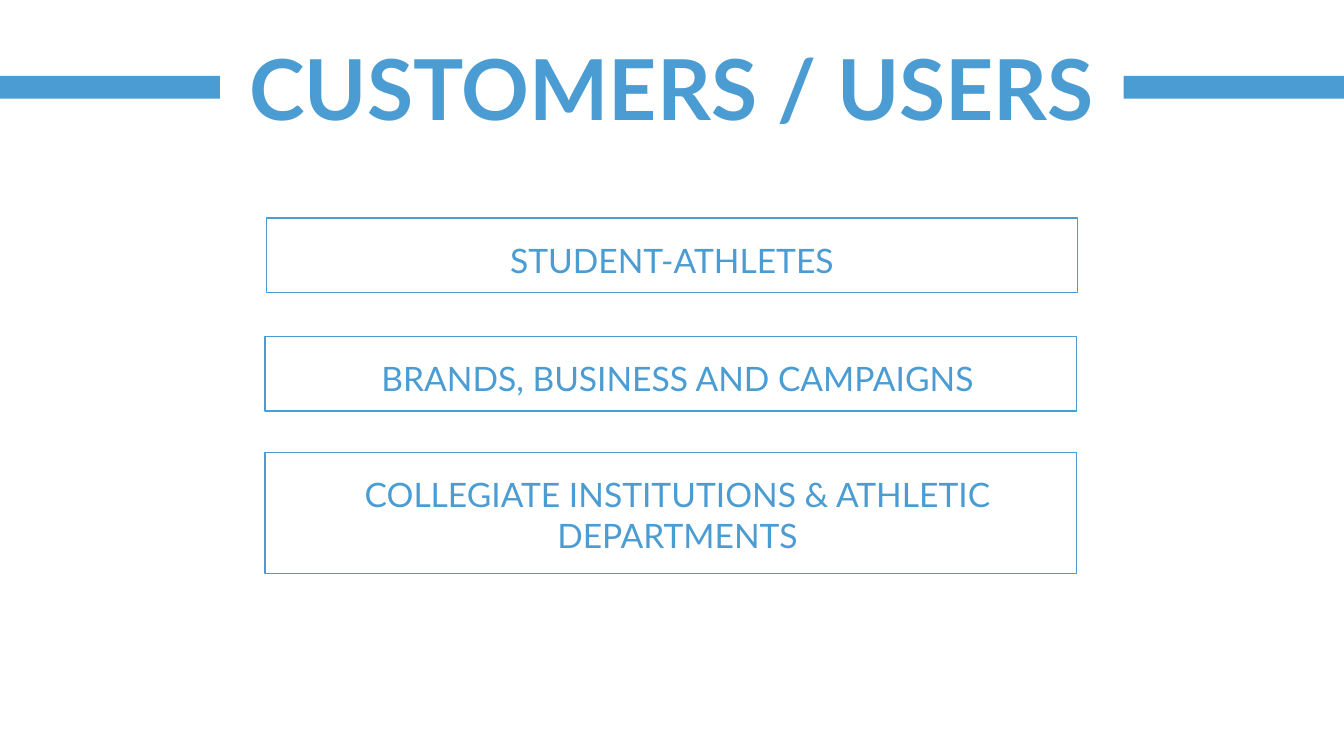
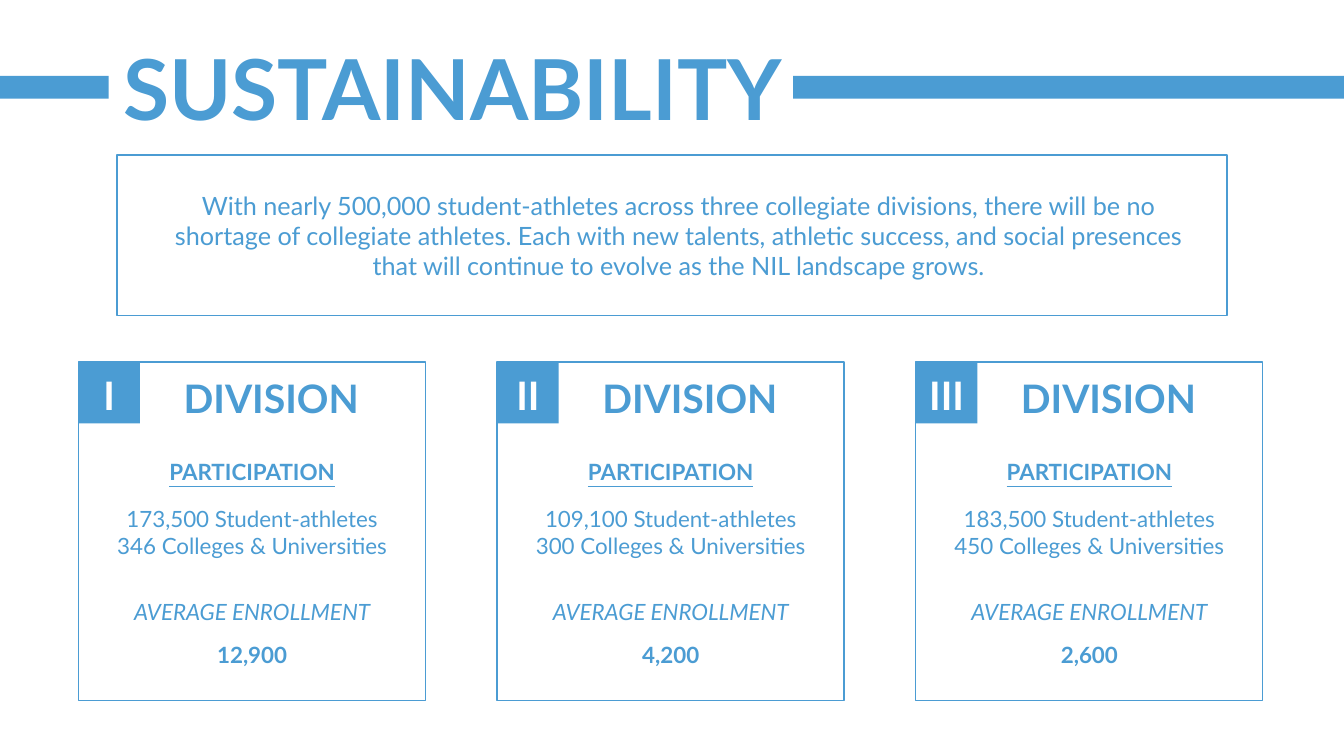
from pptx import Presentation
from pptx.dml.color import RGBColor
from pptx.enum.shapes import MSO_SHAPE
from pptx.enum.text import MSO_ANCHOR, PP_ALIGN
from pptx.util import Cm, Pt

COLOURS = {"blue": "4B9CD3", "white": "FFFFFF"}
FONT = "Lato"
PAGE_WIDTH, PAGE_HEIGHT = 33.87, 19.05
BAND_TOP, BAND_HEIGHT = 1.91, 0.58

STYLES = {
    "title": {"size": Pt(60), "bold": True},
    "customer": {"size": Pt(24)},
    "statement": {"size": Pt(18)},
    "heading": {"size": Pt(28), "bold": True},
    "label": {"size": Pt(16), "bold": True, "underline": True},
    "body": {"size": Pt(16)},
    "caption": {"size": Pt(16), "italic": True},
    "figure": {"size": Pt(16), "bold": True},
}

# Title, its left and width, end of the left band, start of the right band
CUSTOMERS_HEADER = ("CUSTOMERS / USERS", 5.54, 22.78, 5.54, 28.32)
SUSTAINABILITY_HEADER = ("SUSTAINABILITY", 2.62, 17.58, 2.74, 19.99)

# Text, frame (left, top, width, height), shift of the text (right, down)
CUSTOMERS = [
    ("STUDENT-ATHLETES", (6.71, 5.49, 20.45, 1.88), (0, 0.13)),
    ("BRANDS, BUSINESS AND CAMPAIGNS", (6.68, 8.48, 20.45, 1.88), (0.17, 0.1)),
    ("COLLEGIATE INSTITUTIONS & ATHLETIC DEPARTMENTS",
     (6.68, 11.4, 20.45, 3.05), (0.17, 0.04)),
]
STATEMENT = (
    "With nearly 500,000 student-athletes across three collegiate divisions, "
    "there will be no shortage of collegiate athletes. Each with new talents, "
    "athletic success, and social presences that will continue to evolve as "
    "the NIL landscape grows."
)
STATEMENT_FRAME = (2.95, 3.91, 27.97, 4.04)

# Numeral, student-athletes, colleges, average enrollment
DIVISIONS = [
    ("I", "173,500", "346", "12,900"),
    ("II", "109,100", "300", "4,200"),
    ("III", "183,500", "450", "2,600"),
]
CARD_LEFT, CARD_TOP, CARD_WIDTH, CARD_HEIGHT = 1.98, 9.12, 8.74, 8.53
CARD_PITCH = 10.55
BADGE_SIZE = 1.55
CARD_TEXT_WIDTH = 7.75


def colour(name):
    return RGBColor.from_string(COLOURS[name])


def write(shape, lines, style, ink="blue", **frame_format):
    """Fill a shape with centred paragraphs in one of the named styles."""
    frame = shape.text_frame
    for name, value in {"word_wrap": True, **frame_format}.items():
        setattr(frame, name, value)
    for index, line in enumerate(lines):
        para = frame.paragraphs[0] if index == 0 else frame.add_paragraph()
        para.alignment = PP_ALIGN.CENTER
        span = para.add_run()
        span.text = line
        for name, value in {"name": FONT, **STYLES[style]}.items():
            setattr(span.font, name, value)
        span.font.color.rgb = colour(ink)


def add_text(page, place, lines, style):
    write(page.shapes.add_textbox(*map(Cm, place)), lines, style)


def add_box(page, place, filled=False):
    """Add a rectangle, either solid blue or with a blue outline only."""
    box = page.shapes.add_shape(MSO_SHAPE.RECTANGLE, *map(Cm, place))
    box.shadow.inherit = False
    if filled:
        box.fill.solid()
        box.fill.fore_color.rgb = colour("blue")
        box.line.fill.background()
    else:
        box.fill.background()
        box.line.color.rgb = colour("blue")
        box.line.width = Pt(1)
    return box


def add_framed_text(page, text, place, style, padding, shift=(0, 0)):
    right, down = shift
    write(add_box(page, place), [text], style,
          vertical_anchor=MSO_ANCHOR.MIDDLE,
          margin_left=Cm(padding + right), margin_right=Cm(padding - right),
          margin_top=Cm(0.13 + down), margin_bottom=Cm(0.13 - down))


def add_page(deck, header):
    """Add a blank page with the title between its two bands."""
    title, left, width, band_end, band_start = header
    page = deck.slides.add_slide(deck.slide_layouts[6])
    add_text(page, (left, 0.79, width, 2.82), [title], "title")
    for start, end in ((0, band_end), (band_start, PAGE_WIDTH)):
        add_box(page, (start, BAND_TOP, end - start, BAND_HEIGHT), filled=True)
    return page


def add_division(page, left, division):
    numeral, athletes, colleges, enrollment = division
    add_box(page, (left, CARD_TOP, CARD_WIDTH, CARD_HEIGHT))
    badge = add_box(page, (left, CARD_TOP, BADGE_SIZE, BADGE_SIZE), filled=True)
    write(badge, [numeral], "heading", "white",
          vertical_anchor=MSO_ANCHOR.MIDDLE,
          margin_left=0, margin_right=0, margin_top=Cm(0.1), margin_bottom=0)
    people = [f"{athletes} Student-athletes", f"{colleges} Colleges & Universities"]
    for indent, top, height, lines, style in (
        (0.98, 9.3, 1.45, ["DIVISION"], "heading"),
        (0.5, 11.43, 0.94, ["PARTICIPATION"], "label"),
        (0.5, 12.6, 1.63, people, "body"),
        (0.5, 14.96, 0.94, ["AVERAGE ENROLLMENT"], "caption"),
        (0.5, 16.03, 0.94, [enrollment], "figure"),
    ):
        add_text(page, (left + indent, top, CARD_TEXT_WIDTH, height), lines, style)


def main():
    deck = Presentation()
    deck.slide_width, deck.slide_height = Cm(PAGE_WIDTH), Cm(PAGE_HEIGHT)

    page = add_page(deck, CUSTOMERS_HEADER)
    for text, place, shift in CUSTOMERS:
        add_framed_text(page, text, place, "customer", 0.75, shift)

    page = add_page(deck, SUSTAINABILITY_HEADER)
    add_framed_text(page, STATEMENT, STATEMENT_FRAME, "statement", 1.26, (0.17, 0))
    for index, division in enumerate(DIVISIONS):
        add_division(page, CARD_LEFT + index * CARD_PITCH, division)

    deck.save("out.pptx")


if __name__ == "__main__":
    main()
